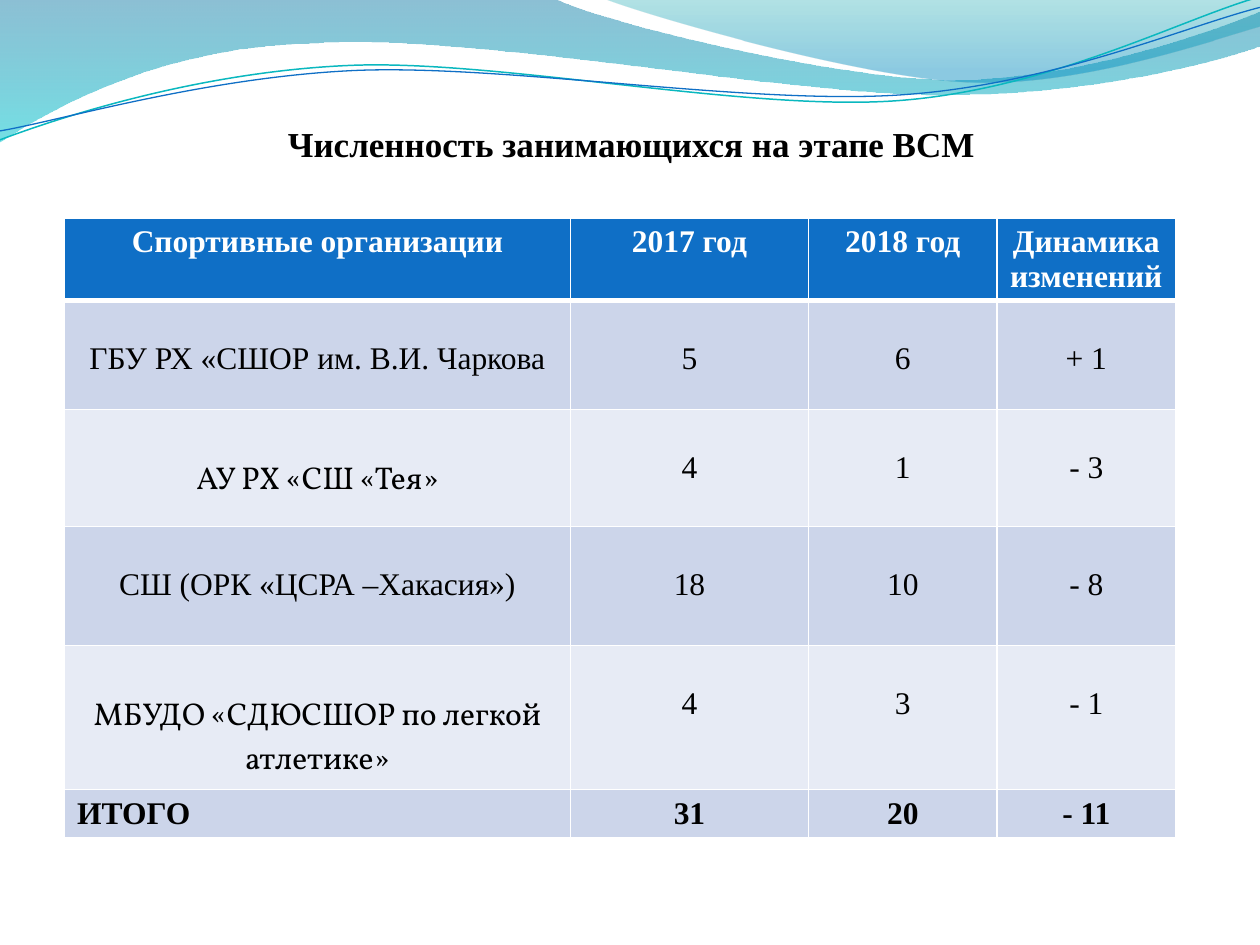
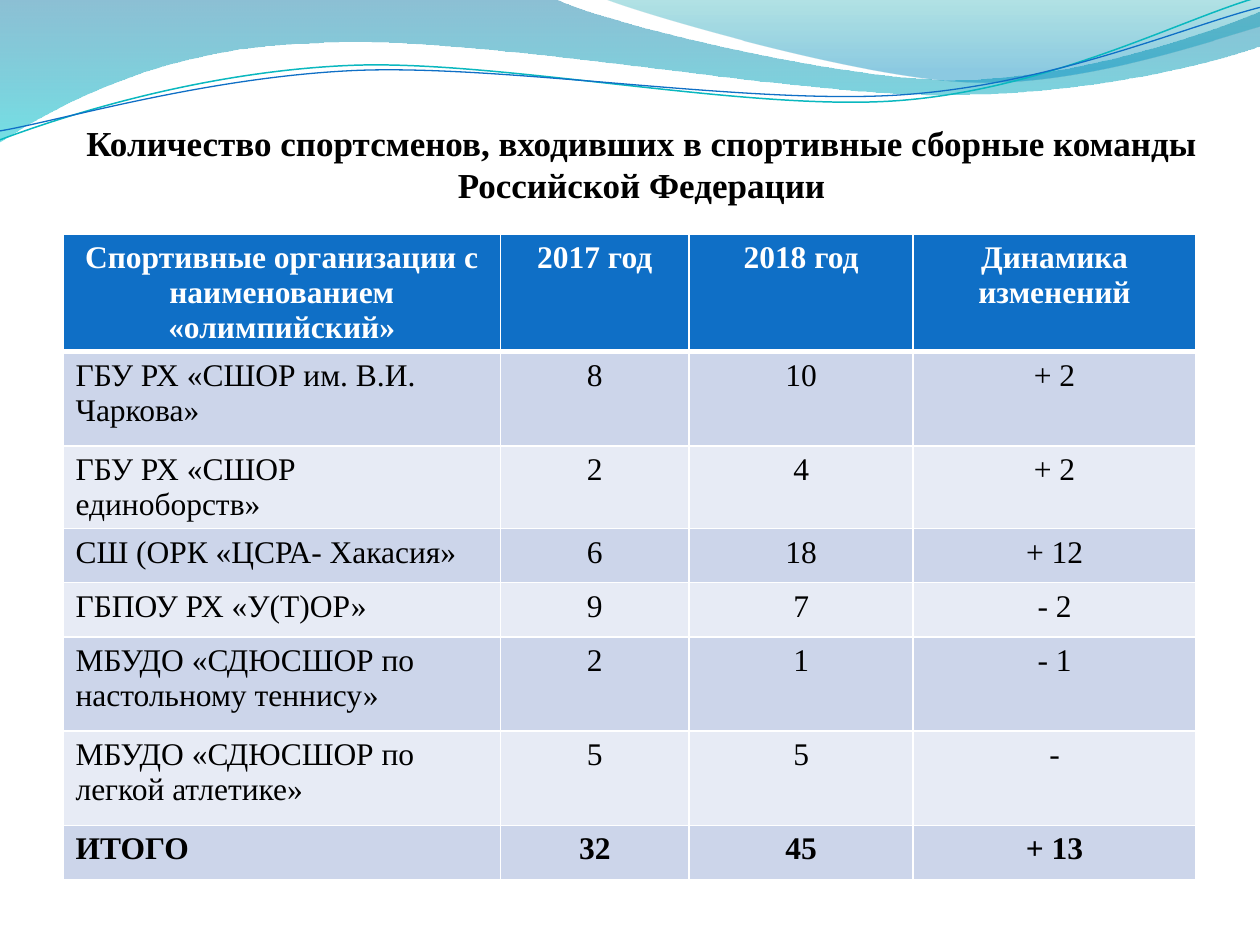
"""Build two slides on athlete numbers, each with a wave band, a title and a table."""
from dataclasses import dataclass
from itertools import chain

from lxml import etree
from pptx import Presentation
from pptx.dml.color import RGBColor
from pptx.enum.text import MSO_ANCHOR, MSO_AUTO_SIZE, PP_ALIGN
from pptx.oxml.ns import qn
from pptx.util import Cm, Pt

LEFT, CENTER = PP_ALIGN.LEFT, PP_ALIGN.CENTER
TOP, BOTTOM = MSO_ANCHOR.TOP, MSO_ANCHOR.BOTTOM
NO_AUTOFIT = MSO_AUTO_SIZE.NONE


@dataclass(frozen=True)
class Theme:
    font: str = "Times New Roman"
    accent_font: str = "Vollkorn"
    title_size: int = 20
    table_size: int = 18
    text: str = "000000"
    white: str = "FFFFFF"
    header: str = "0F6FC6"
    bands: tuple = ("CCD5EA", "E7EBF5")
    wave_back: tuple = ((0, "0074A1", 45), (1, "00C6CF", 55))
    wave_front: tuple = ((0, "00A1A9", 30), (0.8, "008BBF", 45))
    teal_line: str = "0AB8BF"
    blue_line: str = "0F6FC6"


THEME = Theme()
TITLE_ONLY = 5
CELL_MARGIN = 0.13
NAME_MARGIN_RIGHT = 0.3
LINE_GAP = {THEME.font: 0.69, THEME.accent_font: 0.87}


def draw_curve(slide, start, segments, close):
    """Draw straight (one point) and cubic (three points) segments as a freeform."""
    builder = slide.shapes.build_freeform(Cm(start[0]), Cm(start[1]))
    builder.add_line_segments([(Cm(x), Cm(y)) for x, y in chain(*segments)], close=close)
    shape = builder.convert_to_shape()
    shape.shadow.inherit = False
    lines = iter(shape.element.xpath(".//a:lnTo"))
    for segment in segments:
        first, *others = [next(lines) for _ in segment]
        if others:
            first.tag = qn("a:cubicBezTo")
            for line in others:
                first.append(line[0])
                line.getparent().remove(line)
    return shape


def style_cell(cell, fill, bottom_width, top_width):
    """Give a cell its white borders and solid fill."""
    properties = cell._tc.get_or_add_tcPr()
    for side, width in (("L", 1), ("R", 1), ("T", top_width), ("B", bottom_width)):
        border = etree.SubElement(properties, qn(f"a:ln{side}"), w=str(Pt(width)))
        solid = etree.SubElement(border, qn("a:solidFill"))
        etree.SubElement(solid, qn("a:srgbClr"), val=THEME.white)
    cell.fill.solid()
    cell.fill.fore_color.rgb = RGBColor.from_string(fill)


WAVES = [
    (THEME.wave_back, (0, 0), [
        [(11.18, -0.03)],
        [(12.09, 0.43), (16.87, 1.6), (19.25, 1.6)],
        [(21.67, 1.6), (24.33, 0.66), (25.4, 0.23)],
        [(25.43, 0.91)],
        [(24.97, 1.12), (22.1, 1.93), (18.95, 1.91)],
        [(15.8, 1.91), (9.7, 0.71), (6.53, 0.86)],
        [(3.28, 0.91), (1.17, 2.11), (-0.03, 2.87)],
    ]),
    (THEME.wave_front, (12.17, -0.03), [
        [(12.93, 0.28), (17.32, 1.57), (19.53, 1.65)],
        [(21.74, 1.75), (24.41, 0.81), (25.4, 0.53)],
        [(25.4, 0)],
    ]),
]
WAVE_LINES = [
    (THEME.teal_line, 0.85, (0, 2.82), [
        [(1.22, 2.36), (4.01, 1.45), (7.04, 1.32)],
        [(10.03, 1.19), (15.06, 2.26), (18.11, 2.03)],
        [(21.16, 1.8), (23.83, 0.38), (25.35, -0.05)],
    ]),
    (THEME.blue_line, 0.75, (0, 2.64), [
        [(1.19, 2.44), (4.17, 1.55), (7.19, 1.42)],
        [(10.24, 1.3), (15.16, 2.13), (18.21, 1.91)],
        [(21.23, 1.7), (23.9, 0.53), (25.4, 0.15)],
    ]),
]

PAGES = [
    {
        "title": "Численность занимающихся на этапе ВСМ",
        "title_box": (1.3, 2.13, 22.86, 1.19),
        "table_origin": (1.3, 4.39),
        "columns": (10.2, 4.8, 3.8, 3.6),
        "heights": (1.63, 2.2, 2.36, 2.4, 2.9, 0.95),
        "name_align": CENTER,
        "lowered": True,
        "accent_rows": (2, 4),
        "rows": [
            ("Спортивные организации", "2017 год", "2018 год", "Динамика изменений"),
            ("ГБУ РХ «СШОР им. В.И. Чаркова", "5", "6", "+ 1"),
            ("АУ РХ «СШ «Тея»", "4", "1", "- 3"),
            ("СШ (ОРК «ЦСРА –Хакасия»)", "18", "10", "- 8"),
            ("МБУДО «СДЮСШОР по легкой атлетике»", "4", "3", "- 1"),
            ("ИТОГО", "31", "20", "- 11"),
        ],
    },
    {
        "title": "Количество спортсменов, входивших в спортивные сборные команды Российской Федерации",
        "title_box": (1.3, 2.13, 23.27, 2.01),
        "table_origin": (1.27, 4.72),
        "columns": (8.82, 3.8, 4.52, 5.7),
        "heights": (2.35, 1.9, 1.66, 1.09, 1.09, 1.9, 1.9, 1.09),
        "name_align": LEFT,
        "lowered": False,
        "accent_rows": (),
        "rows": [
            ("Спортивные организации с наименованием «олимпийский»",
             "2017 год", "2018 год", "Динамика изменений"),
            ("ГБУ РХ «СШОР им. В.И. Чаркова»", "8", "10", "+ 2"),
            ("ГБУ РХ «СШОР единоборств»", "2", "4", "+ 2"),
            ("СШ (ОРК «ЦСРА- Хакасия»", "6", "18", "+ 12"),
            ("ГБПОУ РХ «У(Т)ОР»", "9", "7", "- 2"),
            ("МБУДО «СДЮСШОР по настольному теннису»", "2", "1", "- 1"),
            ("МБУДО «СДЮСШОР по легкой атлетике»", "5", "5", "-"),
            ("ИТОГО", "32", "45", "+ 13"),
        ],
    },
]

presentation = Presentation()
presentation.slide_width, presentation.slide_height = Cm(25.4), Cm(19.05)
layout = presentation.slide_layouts[TITLE_ONLY]
slides = [presentation.slides.add_slide(layout) for page in PAGES]

wave_shapes = []
for stops, start, segments in WAVES:
    shape = draw_curve(slides[0], start, segments, close=True)
    shape.line.fill.background()
    shape.fill.gradient()
    shape.fill.gradient_angle = 270
    for stop, (position, color, _) in zip(shape.fill.gradient_stops, stops):
        stop.position = position
        stop.color.rgb = RGBColor.from_string(color)
    for color_element, (_, _, opacity) in zip(shape.element.xpath(".//a:gs/a:srgbClr"), stops):
        etree.SubElement(color_element, qn("a:alpha"), val=str(opacity * 1000))
    wave_shapes.append(shape)

for color, width, start, segments in WAVE_LINES:
    shape = draw_curve(slides[0], start, segments, close=False)
    shape.fill.background()
    shape.line.color.rgb = RGBColor.from_string(color)
    shape.line.width = Pt(width)
    wave_shapes.append(shape)

for shape_id, shape in enumerate(wave_shapes, start=101):
    shape.element.nvSpPr.cNvPr.set("id", str(shape_id))
    layout.shapes.element.append(shape.element)

for slide, page in zip(slides, PAGES):
    title = slide.shapes.title
    title.left, title.top, title.width, title.height = map(Cm, page["title_box"])
    text_frame = title.text_frame
    text_frame.text = page["title"]
    text_frame.word_wrap = True
    text_frame.auto_size = NO_AUTOFIT
    text_frame.vertical_anchor = BOTTOM
    text_frame.margin_left = text_frame.margin_right = text_frame.margin_bottom = 0
    text_frame.margin_top = Cm(CELL_MARGIN)
    paragraph = text_frame.paragraphs[0]
    paragraph.alignment = CENTER
    font = paragraph.runs[0].font
    font.name, font.size, font.bold = THEME.font, Pt(THEME.title_size), True
    font.color.rgb = RGBColor.from_string(THEME.text)

    rows, columns, heights = page["rows"], page["columns"], page["heights"]
    left, top = page["table_origin"]
    table = slide.shapes.add_table(
        len(rows), len(columns), Cm(left), Cm(top), Cm(sum(columns)), Cm(sum(heights))).table
    for column, width in zip(table.columns, columns):
        column.width = Cm(width)
    for row, height in zip(table.rows, heights):
        row.height = Cm(height)

    last_row = len(rows) - 1
    for row_index, row_values in enumerate(rows):
        is_header, is_total = row_index == 0, row_index == last_row
        for column_index, value in enumerate(row_values):
            cell = table.cell(row_index, column_index)
            is_name = column_index == 0
            font_name = THEME.accent_font if is_name and row_index in page["accent_rows"] else THEME.font
            style_cell(
                cell,
                THEME.header if is_header else THEME.bands[(row_index - 1) % 2],
                bottom_width=3 if is_header else 1,
                top_width=3 if row_index == 1 else 1)
            lowered = page["lowered"] and not is_header and not is_total
            cell.margin_top = Cm(CELL_MARGIN + (LINE_GAP[font_name] if lowered else 0))
            cell.margin_bottom = Cm(CELL_MARGIN)
            cell.vertical_anchor = TOP
            cell.text_frame.text = value
            paragraph = cell.text_frame.paragraphs[0]
            paragraph.alignment = CENTER
            if is_name and not is_header:
                paragraph.alignment = LEFT if is_total else page["name_align"]
                if paragraph.alignment == LEFT:
                    cell.margin_right = Cm(NAME_MARGIN_RIGHT)
            font = paragraph.runs[0].font
            font.name, font.size = font_name, Pt(THEME.table_size)
            font.bold = is_header or is_total
            font.color.rgb = RGBColor.from_string(THEME.white if is_header else THEME.text)

presentation.save("out.pptx")
